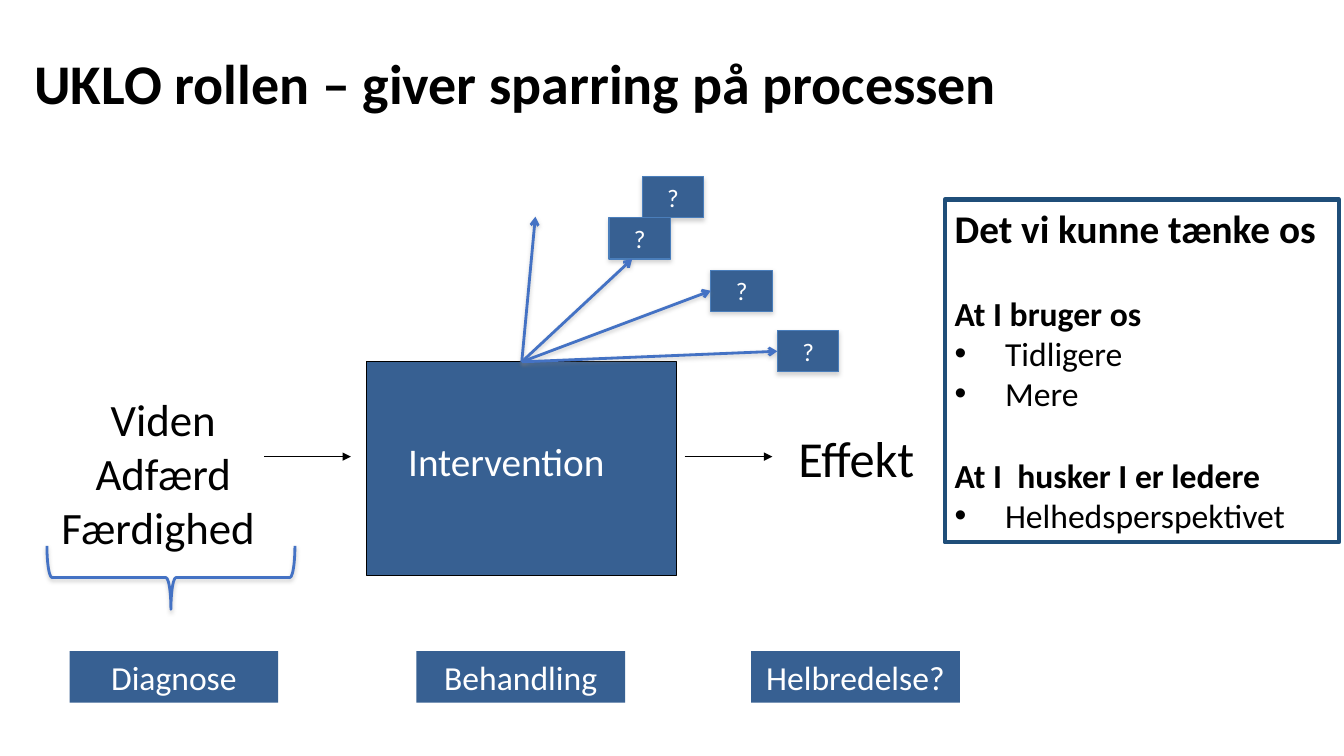
"""Build the slide on the UKLO role in giving feedback on the process."""

from dataclasses import dataclass
from typing import Optional

from lxml.etree import SubElement
from pptx import Presentation
from pptx.dml.color import RGBColor
from pptx.enum.shapes import MSO_CONNECTOR, MSO_SHAPE
from pptx.enum.text import MSO_ANCHOR, PP_ALIGN
from pptx.oxml.ns import qn
from pptx.util import Inches, Pt


@dataclass(frozen=True)
class Theme:
    font: str = "Calibri"
    black: str = "000000"
    white: str = "FFFFFF"
    fill: str = "376092"
    edge: str = "4A7EBB"
    ray: str = "4472C4"
    frame: str = "1F4E79"
    shade: str = "808080"
    title: int = 40
    effect: int = 36
    factors: int = 32
    heading: int = 28
    body: int = 24
    question: int = 18


@dataclass(frozen=True)
class Area:
    left: float
    top: float
    width: float
    height: float

    def lengths(self) -> list:
        return [Inches(value) for value in (self.left, self.top, self.width, self.height)]


@dataclass(frozen=True)
class Arrow:
    start: tuple
    end: tuple
    target: Optional[int] = None


@dataclass(frozen=True)
class PanelLine:
    text: str
    size: int
    bullet: bool = False
    gap: float = 0


THEME = Theme()
INTERVENTION = Area(3.64, 3.59, 3.07, 2.12)
QUESTIONS = [Area(left, top, 0.61, 0.41)
             for left, top in ((6.37, 1.75), (7.71, 3.28), (6.04, 2.16), (7.05, 2.68))]
ORIGIN = (5.18, 3.59)
RAYS = [
    Arrow(ORIGIN, (5.31, 2.15)),
    Arrow(ORIGIN, (6.27, 2.57)),
    Arrow(ORIGIN, (7.05, 2.88), 3),
    Arrow(ORIGIN, (7.71, 3.48), 1),
]
FLOWS = [Arrow((2.62, 4.53), (3.48, 4.53)), Arrow((6.79, 4.53), (7.66, 4.53))]
STAGES = {"Diagnose": 0.69, "Behandling": 4.13, "Helbredelse?": 7.45}
BLANK_LINE = 29.3
PANEL = [
    PanelLine("Det vi kunne tænke os", THEME.heading),
    PanelLine("At I bruger os", THEME.body, gap=BLANK_LINE),
    PanelLine("Tidligere", THEME.body, bullet=True),
    PanelLine("Mere", THEME.body, bullet=True),
    PanelLine("At I  husker I er ledere", THEME.body, gap=BLANK_LINE),
    PanelLine("Helhedsperspektivet", THEME.body, bullet=True),
]


def colour(code: str) -> RGBColor:
    return RGBColor.from_string(code)


def format_paragraph(para, size: int, code: str, align=PP_ALIGN.LEFT, bold: bool = False) -> None:
    para.alignment = align
    for span in para.runs:
        span.font.name = THEME.font
        span.font.size = Pt(size)
        span.font.bold = bold
        span.font.color.rgb = colour(code)


def write(shape, text: str, size: int, code: str, align=PP_ALIGN.CENTER) -> None:
    shape.text_frame.text = text
    for para in shape.text_frame.paragraphs:
        format_paragraph(para, size, code, align)


def add_text(page, area: Area, text: str, size: int, code: str, align, wrap: bool = True) -> None:
    box = page.shapes.add_textbox(*area.lengths())
    box.text_frame.word_wrap = wrap
    write(box, text, size, code, align)


def set_line(line, code: Optional[str], width: float) -> None:
    if code is None:
        line.fill.background()
        return
    line.color.rgb = colour(code)
    line.width = Pt(width)


def cast_shadow(effects, distance: float, opacity: int) -> None:
    shadow = SubElement(effects, qn("a:outerShdw"), blurRad=str(Pt(3.1)),
                        dist=str(Pt(distance)), dir="5400000", rotWithShape="0")
    shade = SubElement(shadow, qn("a:srgbClr"), val=THEME.shade)
    SubElement(shade, qn("a:alpha"), val=str(opacity * 1000))


def add_figure(page, kind, area: Area, fill: Optional[str], line: Optional[str], width: float = 0.75):
    shape = page.shapes.add_shape(kind, *area.lengths())
    shape.shadow.inherit = False
    if fill is None:
        shape.fill.background()
    else:
        shape.fill.solid()
        shape.fill.fore_color.rgb = colour(fill)
    set_line(shape.line, line, width)
    return shape


def add_arrow(page, arrow: Arrow, code: str, width: float, head: str):
    ends = [Inches(value) for value in arrow.start + arrow.end]
    connector = page.shapes.add_connector(MSO_CONNECTOR.STRAIGHT, *ends)
    set_line(connector.line, code, width)
    properties = connector._element.spPr
    SubElement(properties.find(qn("a:ln")), qn("a:tailEnd"), type=head)
    SubElement(properties, qn("a:effectLst"))
    return connector


def add_title(page) -> None:
    title = page.shapes.title
    title.left, title.top, title.width, title.height = Area(0.24, 0.13, 12.21, 1.45).lengths()
    title.text_frame.text = "UKLO rollen – giver sparring på processen"
    title.text_frame.vertical_anchor = MSO_ANCHOR.MIDDLE
    title.text_frame.word_wrap = True
    para = title.text_frame.paragraphs[0]
    para.line_spacing = 0.9
    format_paragraph(para, THEME.title, THEME.black, bold=True)


def add_questions(page, source) -> None:
    boxes = []
    for area in QUESTIONS:
        box = add_figure(page, MSO_SHAPE.RECTANGLE, area, THEME.fill, THEME.edge)
        write(box, "?", THEME.question, THEME.white)
        cast_shadow(box._element.spPr.find(qn("a:effectLst")), 1.8, 35)
        boxes.append(box)
    for ray in RAYS:
        connector = add_arrow(page, ray, THEME.ray, 2, "arrow")
        cast_shadow(connector._element.spPr.find(qn("a:effectLst")), 1.6, 38)
        connector.begin_connect(source, 0)
        if ray.target is not None:
            connector.end_connect(boxes[ray.target], 1)


def add_brace(page) -> None:
    brace = add_figure(page, MSO_SHAPE.RIGHT_BRACE, Area(1.38, 4.5, 0.63, 2.46), None, THEME.ray, 2)
    brace.rotation = 90
    brace.adjustments[0] = 0.08
    brace.adjustments[1] = 0.5
    cast_shadow(brace._element.spPr.find(qn("a:effectLst")), 1.6, 38)


def add_panel(page) -> None:
    panel = add_figure(page, MSO_SHAPE.RECTANGLE, Area(9.37, 1.98, 3.91, 3.4), None, THEME.frame, 3)
    frame = panel.text_frame
    frame.vertical_anchor = MSO_ANCHOR.TOP
    frame.text = "\n".join(entry.text for entry in PANEL)
    for para, entry in zip(frame.paragraphs, PANEL):
        format_paragraph(para, entry.size, THEME.black, bold=not entry.bullet)
        para.space_before = Pt(entry.gap)
        if entry.bullet:
            properties = para._p.get_or_add_pPr()
            properties.set("marL", str(Inches(0.5)))
            properties.set("indent", str(Inches(-0.5)))
            SubElement(properties, qn("a:buFont"), typeface="Arial")
            SubElement(properties, qn("a:buChar"), char="•")


def main() -> None:
    deck = Presentation()
    deck.slide_width, deck.slide_height = Inches(13.33), Inches(7.5)
    page = deck.slides.add_slide(deck.slide_layouts[5])
    add_title(page)
    source = add_figure(page, MSO_SHAPE.RECTANGLE, INTERVENTION, THEME.fill, THEME.black)
    add_text(page, Area(0.47, 3.84, 2.3, 1.72), "Viden\nAdfærd\nFærdighed ",
             THEME.factors, THEME.black, PP_ALIGN.CENTER)
    add_text(page, Area(7.82, 4.19, 1.39, 0.71), "Effekt",
             THEME.effect, THEME.black, PP_ALIGN.LEFT, wrap=False)
    add_text(page, Area(3.95, 4.29, 2.28, 0.57), "Intervention",
             THEME.heading, THEME.white, PP_ALIGN.LEFT)
    for flow in FLOWS:
        add_arrow(page, flow, THEME.black, 0.75, "triangle")
    add_questions(page, source)
    add_brace(page)
    for name, left in STAGES.items():
        stage = add_figure(page, MSO_SHAPE.RECTANGLE, Area(left, 6.46, 2.07, 0.51), THEME.fill, None)
        write(stage, name, THEME.body, THEME.white)
    add_panel(page)
    deck.save("out.pptx")


if __name__ == "__main__":
    main()
